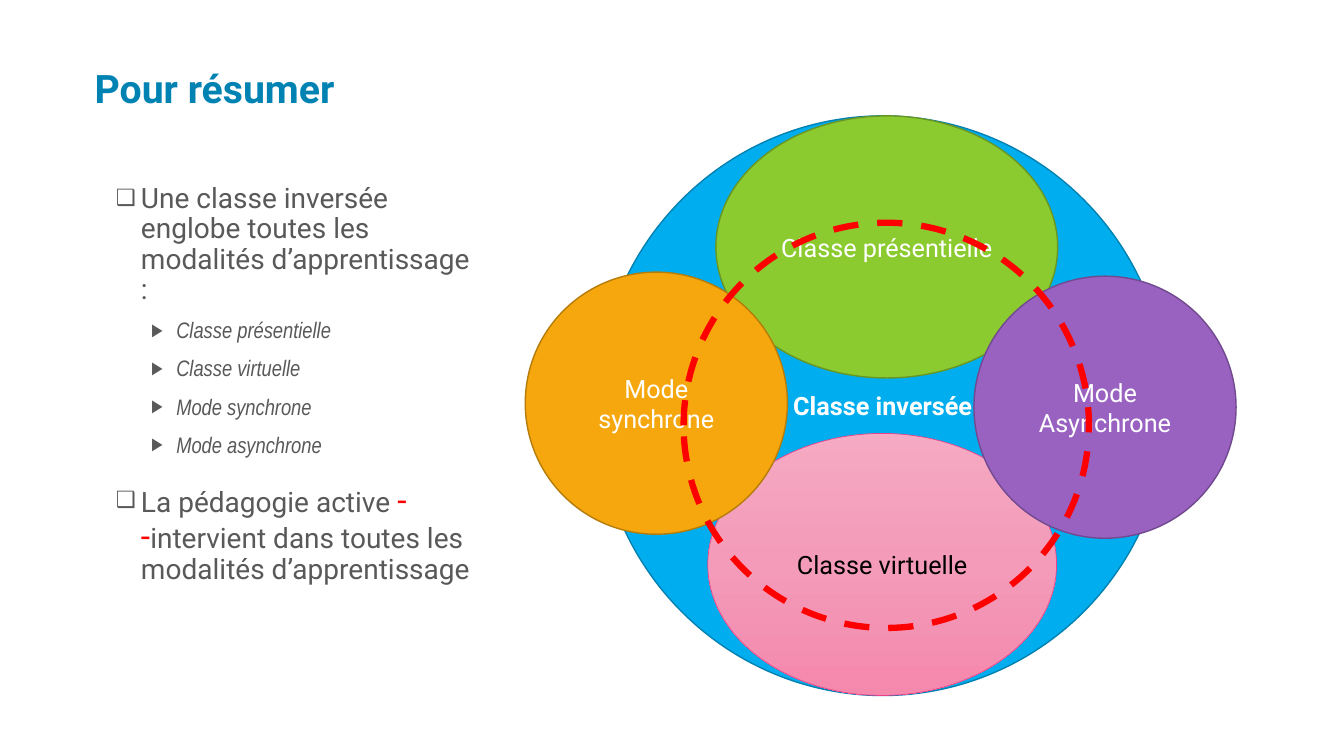
from copy import deepcopy

from lxml import etree
from pptx import Presentation
from pptx.dml.color import RGBColor
from pptx.enum.dml import MSO_LINE
from pptx.enum.shapes import MSO_SHAPE
from pptx.enum.text import MSO_ANCHOR, PP_ALIGN
from pptx.oxml.ns import qn
from pptx.util import Emu, Pt

PX = 9144  # 100 px to the inch
ELLIPSE = MSO_SHAPE.OVAL
DASH = MSO_LINE.DASH
BOTTOM, MIDDLE = MSO_ANCHOR.BOTTOM, MSO_ANCHOR.MIDDLE
CENTER = PP_ALIGN.CENTER

FONT, NARROW_FONT = "Roboto", "Arial Narrow"
BLUE, GREY, RED, WHITE, BLACK = "0083B3", "595959", "FF0000", "FFFFFF", "000000"
PINK_STOPS = [(0, "F5A9C3"), (0.5, "F39BB8"), (1, "F588AD")]

MODALITIES = ["Classe présentielle", "Classe virtuelle", "Mode synchrone", "Mode asynchrone"]

# label, box, fill, line colour, line width, text colour, bold
CIRCLES = [
    ("Classe inversée", (592, 115, 567, 575), "00AEEF", "0081B1", 1, WHITE, True),
    ("Classe virtuelle", (702, 430, 346, 260), PINK_STOPS, "EA428A", 0.5, BLACK, False),
    ("Classe présentielle", (710, 115, 339, 260), "8BCB30", "679624", 1, WHITE, False),
    ("Mode synchrone", (521, 270, 260, 260), "F5A70D", "B57C0A", 1, WHITE, False),
    ("Mode Asynchrone", (966, 274, 260, 260), "9962C1", "71498F", 1, WHITE, False),
]


def px(*lengths):
    return [Emu(length * PX) for length in lengths]


def color(hex_value):
    return RGBColor.from_string(hex_value)


def add_run(paragraph, text, size, hex_color, font=FONT, bold=False, italic=False):
    run = paragraph.add_run()
    run.text = text
    run.font.name = font
    run.font.size = Pt(size)
    run.font.bold = bold
    run.font.italic = italic
    run.font.color.rgb = color(hex_color)


def add_text_box(slide, box):
    frame = slide.shapes.add_textbox(*px(*box)).text_frame
    frame.word_wrap = True
    return frame


def set_bullet(paragraph, character, left, hanging):
    properties = paragraph._p.get_or_add_pPr()
    margin, indent = px(left, -hanging)
    properties.set("marL", str(margin))
    properties.set("indent", str(indent))
    bullet_color = etree.SubElement(properties, qn("a:buClr"))
    etree.SubElement(bullet_color, qn("a:srgbClr"), val=GREY)
    etree.SubElement(properties, qn("a:buSzPct"), val="80000")
    etree.SubElement(properties, qn("a:buFont"), typeface="Arial")
    etree.SubElement(properties, qn("a:buChar"), char=character)


def add_item(frame, runs, level=0, space_before=0):
    """Add one bulleted paragraph; runs hold the arguments of add_run."""
    first = not frame.paragraphs[0].runs
    paragraph = frame.paragraphs[0] if first else frame.add_paragraph()
    paragraph.level = level
    set_bullet(paragraph, "❑▶"[level], 30 + 35 * level, 25)
    paragraph.line_spacing = 0.9
    paragraph.space_before = Pt(space_before)
    for run in runs:
        add_run(paragraph, *run)


def fill_gradient(shape, stops):
    """Fill from top to bottom with three colour stops."""
    shape.fill.gradient()
    shape.fill.gradient_angle = 270
    stop_list = shape._element.spPr.find(f".//{qn('a:gsLst')}")
    stop_list.insert(1, deepcopy(stop_list[0]))
    for stop, (position, hex_color) in zip(shape.fill.gradient_stops, stops):
        stop.position = position
        stop.color.rgb = color(hex_color)


def add_ellipse(slide, box, fill, line_color, line_width):
    shape = slide.shapes.add_shape(ELLIPSE, *px(*box))
    shape.shadow.inherit = False
    if fill is None:
        shape.fill.background()
    elif isinstance(fill, list):
        fill_gradient(shape, fill)
    else:
        shape.fill.solid()
        shape.fill.fore_color.rgb = color(fill)
    shape.line.color.rgb = color(line_color)
    shape.line.width = Pt(line_width)
    return shape


def add_label(shape, text, hex_color, bold):
    frame = shape.text_frame
    frame.word_wrap = True
    frame.vertical_anchor = MIDDLE
    paragraph = frame.paragraphs[0]
    paragraph.alignment = CENTER
    add_run(paragraph, text, 18, hex_color, bold=bold)


def add_title(slide):
    frame = add_text_box(slide, (84, 58, 1158, 57))
    frame.vertical_anchor = BOTTOM
    paragraph = frame.paragraphs[0]
    paragraph.line_spacing = 0.8
    add_run(paragraph, "Pour résumer", 28, BLUE, FONT, True)


def add_summary(slide):
    frame = add_text_box(slide, (100, 178, 382, 488))
    add_item(frame, [("Une classe inversée englobe toutes les modalités d’apprentissage :", 20, GREY)])
    for modality in MODALITIES:
        add_item(frame, [(modality, 16, GREY, NARROW_FONT, False, True)], 1, 10)
    add_item(frame, [
        ("La pédagogie active ", 20, GREY),
        ("- -", 24, RED),
        ("intervient dans toutes les modalités d’apprentissage", 20, GREY),
    ], 0, 18)


def add_diagram(slide):
    for label, box, fill, line_color, line_width, text_color, bold in CIRCLES:
        circle = add_ellipse(slide, box, fill, line_color, line_width)
        add_label(circle, label, text_color, bold)
    ring = add_ellipse(slide, (678, 221, 402, 402), None, RED, 4.5)
    ring.line.dash_style = DASH


def main():
    presentation = Presentation()
    presentation.slide_width, presentation.slide_height = px(1333, 750)
    slide = presentation.slides.add_slide(presentation.slide_layouts[6])
    add_title(slide)
    add_summary(slide)
    add_diagram(slide)
    presentation.save("out.pptx")


if __name__ == "__main__":
    main()
